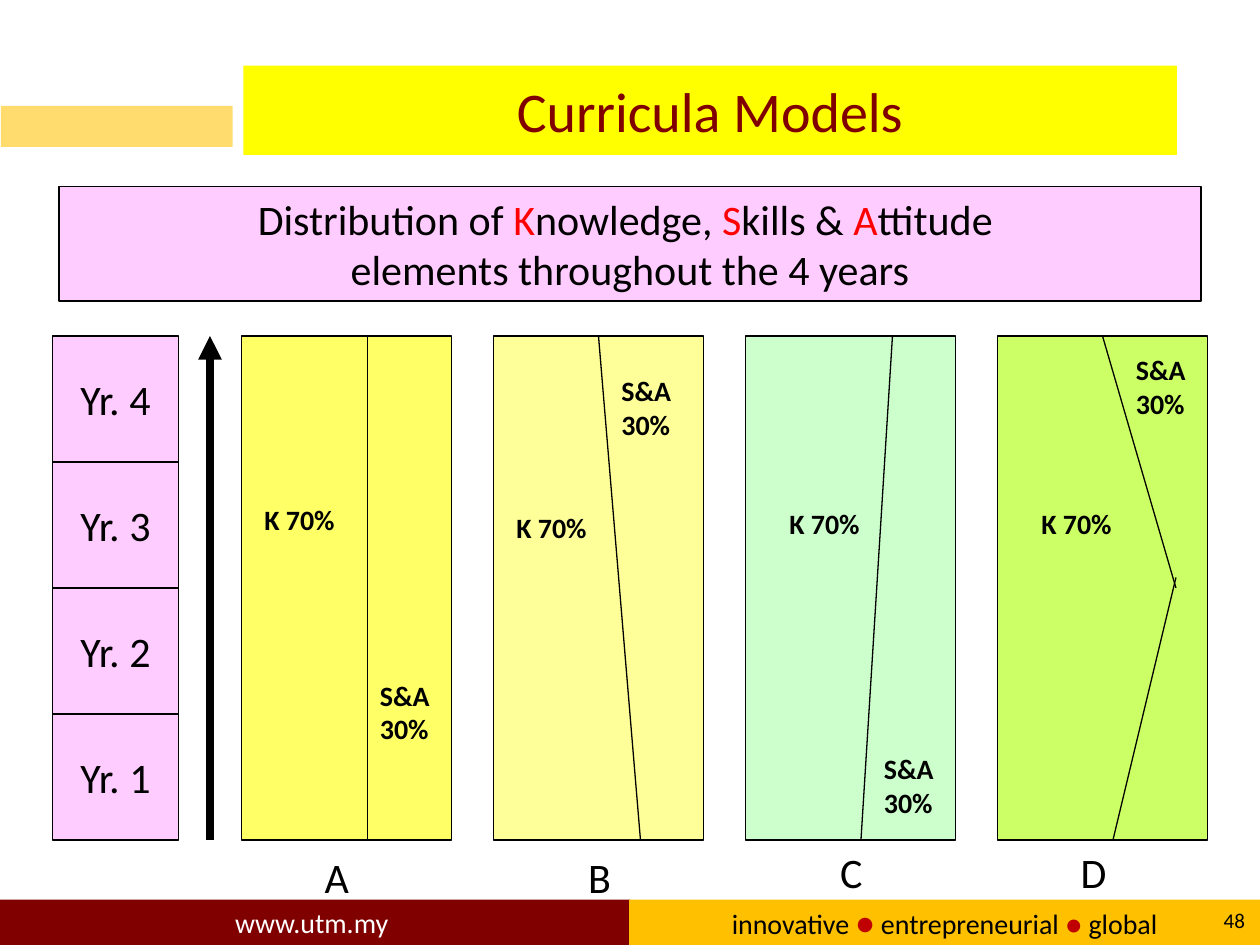
from lxml.etree import SubElement
from pptx import Presentation
from pptx.dml.color import RGBColor
from pptx.enum.shapes import MSO_CONNECTOR, MSO_SHAPE
from pptx.enum.text import MSO_ANCHOR as Anchor, PP_ALIGN as Align
from pptx.oxml.ns import qn
from pptx.util import Pt

COLORS = {
    "black": "000000", "white": "FFFFFF", "red": "FF0000", "maroon": "800000",
    "dot": "C00000", "amber": "FFC000", "sand": "FFDC6D", "title": "FFFF00",
    "pink": "FFCCFF", "A": "FFFF66", "B": "FFFF99", "C": "CCFFCC", "D": "CCFF66",
}
RGB = {name: RGBColor.from_string(value) for name, value in COLORS.items()}


def add_block(box, paragraphs=(), size=24, fill=None, border=False, align=Align.CENTER,
              anchor=Anchor.MIDDLE, wrap=True, bold=False):
    """Add a filled rectangle, or a text box without fill; runs are (text, colour[, size])."""
    bounds = [Pt(value) for value in box]
    if fill:
        block = slide.shapes.add_shape(MSO_SHAPE.RECTANGLE, *bounds)
        block.shadow.inherit = False
        block.fill.solid()
        block.fill.fore_color.rgb = RGB[fill]
        if border:
            block.line.color.rgb = RGB["black"]
            block.line.width = Pt(0.75)
        else:
            block.line.fill.background()
    else:
        block = slide.shapes.add_textbox(*bounds)
    frame = block.text_frame
    frame.word_wrap = wrap
    frame.vertical_anchor = anchor
    for index, runs in enumerate(paragraphs):
        paragraph = frame.add_paragraph() if index else frame.paragraphs[0]
        paragraph.alignment = align
        for text, color, *own_size in runs:
            run = paragraph.add_run()
            run.text = text
            run.font.name = "Calibri"
            run.font.size = Pt(own_size[0] if own_size else size)
            run.font.bold = bold
            run.font.color.rgb = RGB[color]


def add_line(start, end, width=0.75):
    line = slide.shapes.add_connector(
        MSO_CONNECTOR.STRAIGHT, *[Pt(value) for value in (*start, *end)])
    line.line.color.rgb = RGB["black"]
    line.line.width = Pt(width)
    SubElement(line._element.spPr, qn("a:effectLst"))
    return line


prs = Presentation()
prs.slide_width, prs.slide_height = Pt(720), Pt(540)
slide = prs.slides.add_slide(prs.slide_layouts[5])

# Footer band
add_block((0, 514, 360, 26), [[("www.utm.my ", "white")]], 16, "maroon")
add_block((359.5, 514, 360.5, 26), [[
    ("innovative ", "black"), ("●", "dot", 18), (" entrepreneurial ", "black"),
    ("● ", "dot"), ("global", "black")]], 16, "amber")
add_block((672, 511.5, 46.5, 28.5), [[("48", "black")]], 12, align=Align.RIGHT)

# Title
add_block((0.5, 60.5, 132.5, 23.5), fill="sand")
title = slide.shapes.title
title.left, title.top, title.width, title.height = Pt(139), Pt(37.5), Pt(533.5), Pt(51)
title.fill.solid()
title.fill.fore_color.rgb = RGB["title"]
title.text_frame.text = "Curricula Models"
title.text_frame.vertical_anchor = Anchor.MIDDLE
heading = title.text_frame.paragraphs[0]
heading.alignment = Align.CENTER
heading.runs[0].font.name = "Calibri"
heading.runs[0].font.size = Pt(32)
heading.runs[0].font.color.rgb = RGB["maroon"]

add_block((33.75, 106.5, 652.5, 65.5), [
    [("Distribution of ", "black"), ("K", "red"), ("nowledge, ", "black"), ("S", "red"),
     ("kills & ", "black"), ("A", "red"), ("ttitude ", "black")],
    [("elements throughout the 4 years", "black")],
], fill="pink", border=True)

# Years, with the latest on top
TOP, YEAR_SIZE = 192, 72
BOTTOM = TOP + 4 * YEAR_SIZE
for row, year in enumerate((4, 3, 2, 1)):
    add_block((30, TOP + row * YEAR_SIZE, YEAR_SIZE, YEAR_SIZE),
              [[(f"Yr. {year}", "black")]], fill="pink", border=True, wrap=False)
time_arrow = add_line((120, BOTTOM), (120, TOP), 4.5)
SubElement(time_arrow.line._get_or_add_ln(), qn("a:tailEnd"), type="triangle")

# Models: divider lines, then corners of the K, S&A and letter labels
models = {
    "A": ([((210, BOTTOM), (210, TOP))], (144, 283.5), (210, 384), (178.5, 483)),
    "B": ([((366, BOTTOM), (342, TOP))], (288, 288), (348, 210), (329, 483)),
    "C": ([((510, TOP), (492, BOTTOM))], (444, 286), (498, 426), (473, 480)),
    "D": ([((630, TOP), (672, 336)), ((672, 330), (636, BOTTOM))],
          (588, 286), (642, 198), (610.5, 480)),
}
plain = {"align": Align.LEFT, "anchor": Anchor.TOP, "wrap": False}
for column, (model, (dividers, knowledge, skills, letter)) in enumerate(models.items()):
    add_block((138 + column * 144, TOP, 120, BOTTOM - TOP), fill=model, border=True)
    for start, end in dividers:
        add_line(start, end)
    add_block((*knowledge, 63, 26.5), [[("K 70%", "black")]], 16, bold=True, **plain)
    add_block((*skills, 48, 46), [[("S&A", "black")], [("30%", "black")]], 16,
              bold=True, **plain)
    add_block((*letter, 31, 36), [[(model, "black")]], **plain)

prs.save("out.pptx")
